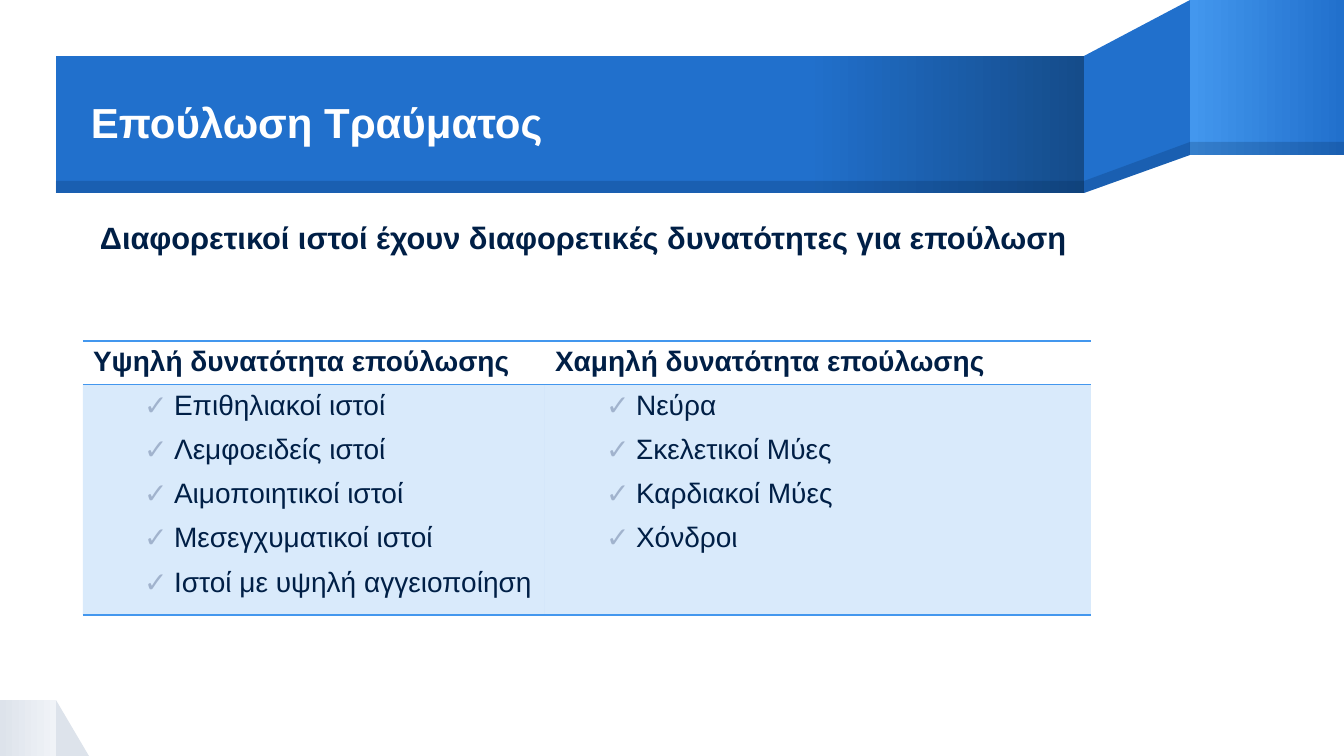
from copy import deepcopy

from lxml import etree
from pptx import Presentation
from pptx.dml.color import RGBColor
from pptx.enum.shapes import MSO_SHAPE
from pptx.enum.text import MSO_ANCHOR, PP_ALIGN
from pptx.oxml.ns import qn
from pptx.util import Emu, Pt

RECTANGLE = MSO_SHAPE.RECTANGLE
RIGHT_TRIANGLE = MSO_SHAPE.RIGHT_TRIANGLE
MIDDLE = MSO_ANCHOR.MIDDLE
TOP = MSO_ANCHOR.TOP
JUSTIFY = PP_ALIGN.JUSTIFY

SCALE = 12192000 / 1344
NAVY, BLUE, SKY, WHITE = "001F46", "2170CC", "4397EE", "FFFFFF"
DEEP, GREY, PALE, CHECK = "154C8A", "DDE3EB", "F0F3F7", "A1B3CD"


def px(*lengths):
    return [Emu(round(length * SCALE)) for length in lengths]


def add_text(paragraph, text, size, color, bold):
    run = paragraph.add_run()
    run.text = text
    run.font.name = "Arial"
    run.font.size = Pt(size)
    run.font.bold = bold
    run.font.color.rgb = RGBColor.from_string(color)


presentation = Presentation()
presentation.slide_width, presentation.slide_height = px(1344, 756)
slide = presentation.slides.add_slide(presentation.slide_layouts[6])
shapes = slide.shapes

SOLID = [(0, BLUE)]
SHADE = [(0, NAVY)]
ribbon = [
    (RIGHT_TRIANGLE, (56, 700, 33, 56), [(0, GREY)]),
    (RECTANGLE, (0, 700, 56, 56), [(0, GREY), (1, PALE)]),
    (None, [(1190, 0), (1084, 56), (1084, 193), (1190, 155)], SOLID),
    (RECTANGLE, (1190, 0, 154, 155), [(0, SKY), (1, BLUE)]),
    (RECTANGLE, (56, 56, 1028, 137), [(0, BLUE), (0.73, BLUE), (1, DEEP)]),
    (None, [(1190, 142), (1084, 181), (1084, 193), (1190, 155)], SHADE),
    (RECTANGLE, (1190, 142, 154, 13), SHADE),
    (RECTANGLE, (56, 181, 1028, 12), SHADE),
]
for kind, geometry, stops in ribbon:
    if kind is None:
        builder = shapes.build_freeform(*geometry[0], scale=SCALE)
        builder.add_line_segments(geometry[1:], close=True)
        shape = builder.convert_to_shape()
    else:
        shape = shapes.add_shape(kind, *px(*geometry))
    shape.shadow.inherit = False
    shape.line.fill.background()
    properties = shape._element.spPr
    if len(stops) == 1:
        shape.fill.solid()
        shape.fill.fore_color.rgb = RGBColor.from_string(stops[0][1])
        if stops is SHADE:
            color = properties.find(qn("a:solidFill"))[0]
            etree.SubElement(color, qn("a:alpha"), val="20000")
    else:
        shape.fill.gradient()
        shape.fill.gradient_angle = 0
        stop_list = properties.find(".//" + qn("a:gsLst"))
        while len(stop_list) < len(stops):
            stop_list.append(deepcopy(stop_list[0]))
        for stop, (position, color) in zip(shape.fill.gradient_stops, stops):
            stop.position = position
            stop.color.rgb = RGBColor.from_string(color)

headings = [
    ("Επούλωση Τραύματος", (91, 57, 993, 135), MIDDLE, 30, WHITE, 0.9),
    ("Διαφορετικοί ιστοί έχουν διαφορετικές δυνατότητες για επούλωση",
     (100, 219, 978, 100), TOP, 22, NAVY, 1),
]
for text, box, anchor, size, color, spacing in headings:
    frame = shapes.add_textbox(*px(*box)).text_frame
    frame.word_wrap = True
    frame.vertical_anchor = anchor
    frame.margin_left = frame.margin_right = 0
    frame.margin_top = frame.margin_bottom = 0
    paragraph = frame.paragraphs[0]
    paragraph.line_spacing = spacing
    add_text(paragraph, text, size, color, True)

columns = [
    ("Υψηλή δυνατότητα επούλωσης", 462, [
        "Επιθηλιακοί ιστοί",
        "Λεμφοειδείς ιστοί",
        "Αιμοποιητικοί ιστοί",
        "Μεσεγχυματικοί ιστοί",
        "Ιστοί με υψηλή αγγειοποίηση",
    ]),
    ("Χαμηλή δυνατότητα επούλωσης", 546, [
        "Νεύρα",
        "Σκελετικοί Μύες",
        "Καρδιακοί Μύες",
        "Χόνδροι",
    ]),
]
table = shapes.add_table(2, 2, *px(83, 341, 1008, 264)).table
table.horz_banding = False
table.rows[0].height, table.rows[1].height = px(42, 222)
margin, hanging = px(81, -30)
for index, (header, width, tissues) in enumerate(columns):
    table.columns[index].width = px(width)[0]
    header_cell, body_cell = table.cell(0, index), table.cell(1, index)
    for cell in (header_cell, body_cell):
        cell_properties = cell._tc.get_or_add_tcPr()
        for side in ("lnL", "lnR", "lnT", "lnB"):
            border = etree.SubElement(cell_properties, qn("a:" + side), w="12700")
            if side in ("lnL", "lnR"):
                etree.SubElement(border, qn("a:noFill"))
            else:
                fill = etree.SubElement(border, qn("a:solidFill"))
                etree.SubElement(fill, qn("a:srgbClr"), val=SKY)
    header_cell.fill.background()
    body_cell.fill.solid()
    body_cell.fill.fore_color.rgb = RGBColor.from_string(SKY)
    tint = body_cell._tc.tcPr.find(qn("a:solidFill"))[0]
    etree.SubElement(tint, qn("a:alpha"), val="20000")

    add_text(header_cell.text_frame.paragraphs[0], header, 20, NAVY, True)
    frame = body_cell.text_frame
    for number, tissue in enumerate(tissues):
        paragraph = frame.add_paragraph() if number else frame.paragraphs[0]
        paragraph.level = 2
        paragraph.alignment = JUSTIFY
        paragraph_properties = paragraph._p.get_or_add_pPr()
        paragraph_properties.set("marL", str(margin))
        paragraph_properties.set("indent", str(hanging))
        bullet_color = etree.SubElement(paragraph_properties, qn("a:buClr"))
        etree.SubElement(bullet_color, qn("a:srgbClr"), val=CHECK)
        etree.SubElement(paragraph_properties, qn("a:buFont"), typeface="Arial")
        etree.SubElement(paragraph_properties, qn("a:buChar"), char="✓")
        paragraph.space_before = Pt(3.3 if number else 0)
        paragraph.space_after = Pt(6)
        add_text(paragraph, tissue, 20, NAVY, False)

presentation.save("out.pptx")
